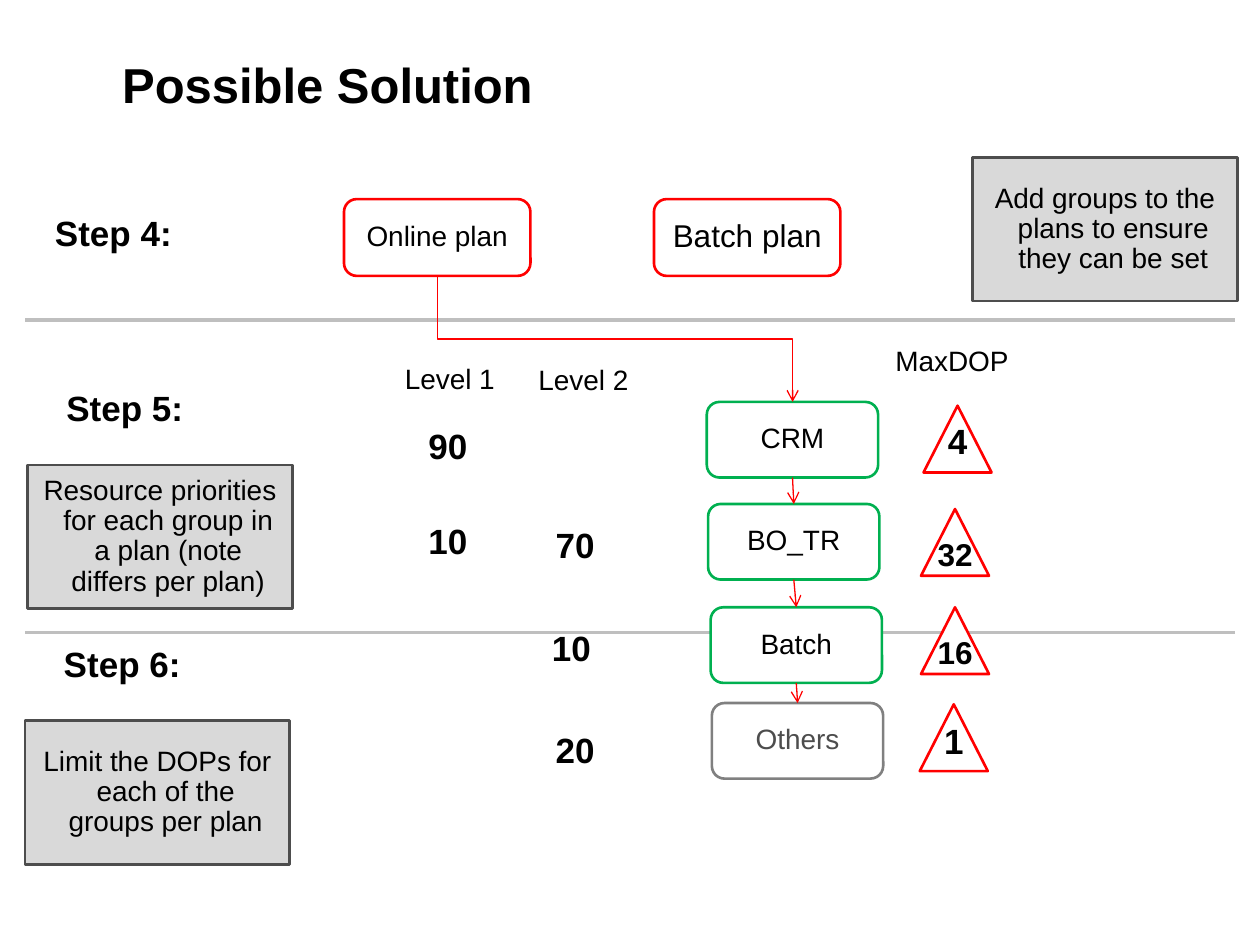
"""Build the resource plan slide with its steps, groups and parallelism limits."""
from lxml import etree
from pptx import Presentation
from pptx.dml.color import RGBColor
from pptx.enum.shapes import MSO_CONNECTOR, MSO_SHAPE
from pptx.enum.text import MSO_ANCHOR, MSO_AUTO_SIZE, PP_ALIGN
from pptx.oxml.ns import qn
from pptx.util import Inches, Pt

STRAIGHT, ELBOW = MSO_CONNECTOR.STRAIGHT, MSO_CONNECTOR.ELBOW
ROUNDED, RECTANGLE = MSO_SHAPE.ROUNDED_RECTANGLE, MSO_SHAPE.RECTANGLE
TRIANGLE = MSO_SHAPE.ISOSCELES_TRIANGLE
MIDDLE, CENTER, LEFT = MSO_ANCHOR.MIDDLE, PP_ALIGN.CENTER, PP_ALIGN.LEFT
TOP_SIDE, BOTTOM_SIDE = 0, 2

COLORS = {
    "black": "000000", "white": "FFFFFF", "red": "FF0000", "green": "00B050",
    "gray": "808080", "dark": "4D4D4D", "note": "D9D9D9", "rule": "BFBFBF",
}
TITLE = "Possible Solution"
PLAN_SIZE, GROUP_SIZE = (1.48, 0.61), (1.36, 0.6)
NOTE_SIZE, LIMIT_SIZE = (2.1, 1.14), (0.54, 0.53)
RULE_TOPS = [2.54, 5.02]
PLANS = [("Online plan", 2.73, 1.58, 16), ("Batch plan", 5.19, 1.58, 18)]
GROUPS = [
    ("CRM", 5.61, 3.19, None, "green", "black"),
    ("BO_TR", 5.62, 4.0, None, "green", "black"),
    ("Batch", 5.64, 4.82, "white", "green", "black"),
    ("Others", 5.65, 5.58, None, "gray", "dark"),
]
NOTES = [
    ("Add groups to the plans to ensure they can be set", 7.72, 1.25),
    ("Resource priorities for each group in a plan (note differs per plan)", 0.22, 3.69),
    ("Limit the DOPs for each of the groups per plan", 0.2, 5.72),
]
LIMIT_PLACES = [(7.33, 3.22), (7.31, 4.04), (7.31, 4.82), (7.3, 5.59)]
STEPS = [("Step 4:", 0.33, 1.67), ("Step 5:", 0.42, 3.06), ("Step 6:", 0.4, 5.09)]
HEADINGS = [
    ("Level 1", 3.11, 2.85, 0.92), ("Level 2", 4.17, 2.86, 0.92), ("MaxDOP", 7.0, 2.71, 1.11),
]
SHARES = [
    ("90", 3.3, 3.36), ("10", 3.3, 4.11), ("70", 4.31, 4.14),
    ("10", 4.28, 4.96), ("20", 4.31, 5.77),
]
LIMITS = [
    ("4", 7.42, 3.32, 0.36, 0.4, 20), ("32", 7.34, 4.23, 0.48, 0.37, 18),
    ("16", 7.34, 5.01, 0.48, 0.37, 18), ("1", 7.39, 5.7, 0.36, 0.4, 20),
]


def rgb(name):
    return RGBColor.from_string(COLORS[name])


def write(box, text, size, color="black", bold=False, align=CENTER, spacing=0.9):
    para = box.text_frame.paragraphs[0]
    for name, value in {"alignment": align, "line_spacing": spacing}.items():
        setattr(para, name, value)
    span = para.add_run()
    span.text = text
    for name, value in {"name": "Arial", "size": Pt(size), "bold": bold}.items():
        setattr(span.font, name, value)
    span.font.color.rgb = rgb(color)
    return para


def add_label(page, text, place, size, bold=False):
    box = page.shapes.add_textbox(*map(Inches, place))
    box.text_frame.word_wrap = False
    box.text_frame.auto_size = MSO_AUTO_SIZE.SHAPE_TO_FIT_TEXT
    write(box, text, size, bold=bold)


def add_outline(page, kind, place, line, fill=None):
    box = page.shapes.add_shape(kind, *map(Inches, place))
    box.shadow.inherit = False
    if fill:
        box.fill.solid()
        box.fill.fore_color.rgb = rgb(fill)
    else:
        box.fill.background()
    box.line.color.rgb = rgb(line)
    box.line.width = Pt(1.5)
    return box


def add_box(page, kind, place, text, line, fill=None, size=16, color="black"):
    box = add_outline(page, kind, place, line, fill)
    box.text_frame.word_wrap = True
    box.text_frame.vertical_anchor = MIDDLE
    para = write(box, text, size, color)
    indent = Inches(0.13)
    for name, value in {"marL": indent, "indent": -indent}.items():
        para._p.get_or_add_pPr().set(name, str(int(value)))
    return box


def add_line(page, kind, ends, color, width, arrow=False):
    line = page.shapes.add_connector(kind, *map(Inches, ends))
    line.line.color.rgb = rgb(color)
    line.line.width = Pt(width)
    if arrow:
        etree.SubElement(line.line._get_or_add_ln(), qn("a:tailEnd"), type="arrow")
    etree.SubElement(line._element.spPr, qn("a:effectLst"))
    return line


def add_title(page):
    box = page.shapes.add_textbox(*map(Inches, (0.97, 0.43, 8.29, 0.94)))
    frame = box.text_frame
    frame.word_wrap = True
    for side in ("left", "top", "right", "bottom"):
        setattr(frame, f"margin_{side}", 0)
    write(box, TITLE, 28, bold=True, align=LEFT, spacing=1.0)


def add_plan_arrow(page, plan, group):
    start_x, start_y = plan.left + plan.width / 2, plan.top + plan.height
    end_x, end_y = group.left + group.width / 2, group.top
    run, drop = (end_x - start_x) / 2, (end_y - start_y) / 2
    mid_x, mid_y = (start_x + end_x) / 2, (start_y + end_y) / 2
    corners = (mid_x + drop, mid_y - run, mid_x - drop, mid_y + run)
    ends = [value / Inches(1) for value in corners]
    arrow = add_line(page, ELBOW, ends, "red", 0.75, True)
    arrow._element.spPr.find(qn("a:xfrm")).set("rot", str(270 * 60000))


def main():
    deck = Presentation()
    deck.slide_width, deck.slide_height = Inches(10), Inches(7.5)
    page = deck.slides.add_slide(deck.slide_layouts[6])
    add_title(page)
    for top in RULE_TOPS:
        add_line(page, STRAIGHT, (0.2, top, 9.8, top), "rule", 2.25)
    plans = [
        add_box(page, ROUNDED, (left, top, *PLAN_SIZE), text, "red", size=size)
        for text, left, top, size in PLANS
    ]
    groups = [
        add_box(page, ROUNDED, (left, top, *GROUP_SIZE), text, line, fill, color=color)
        for text, left, top, fill, line, color in GROUPS
    ]
    add_plan_arrow(page, plans[0], groups[0])
    for upper, lower in zip(groups, groups[1:]):
        arrow = add_line(page, STRAIGHT, (0, 0, 0, 0), "red", 0.75, True)
        arrow.begin_connect(upper, BOTTOM_SIDE)
        arrow.end_connect(lower, TOP_SIDE)
    for text, left, top in NOTES:
        add_box(page, RECTANGLE, (left, top, *NOTE_SIZE), text, "dark", "note")
    for text, left, top in STEPS:
        add_label(page, text, (left, top, 1.14, 0.4), 20, True)
    for text, left, top, width in HEADINGS:
        add_label(page, text, (left, top, width, 0.34), 16)
    for text, left, top in SHARES:
        add_label(page, text, (left, top, 0.51, 0.4), 20, True)
    for place in LIMIT_PLACES:
        add_outline(page, TRIANGLE, (*place, *LIMIT_SIZE), "red", "white")
    for text, *place, size in LIMITS:
        add_label(page, text, place, size, True)
    deck.save("out.pptx")


if __name__ == "__main__":
    main()
